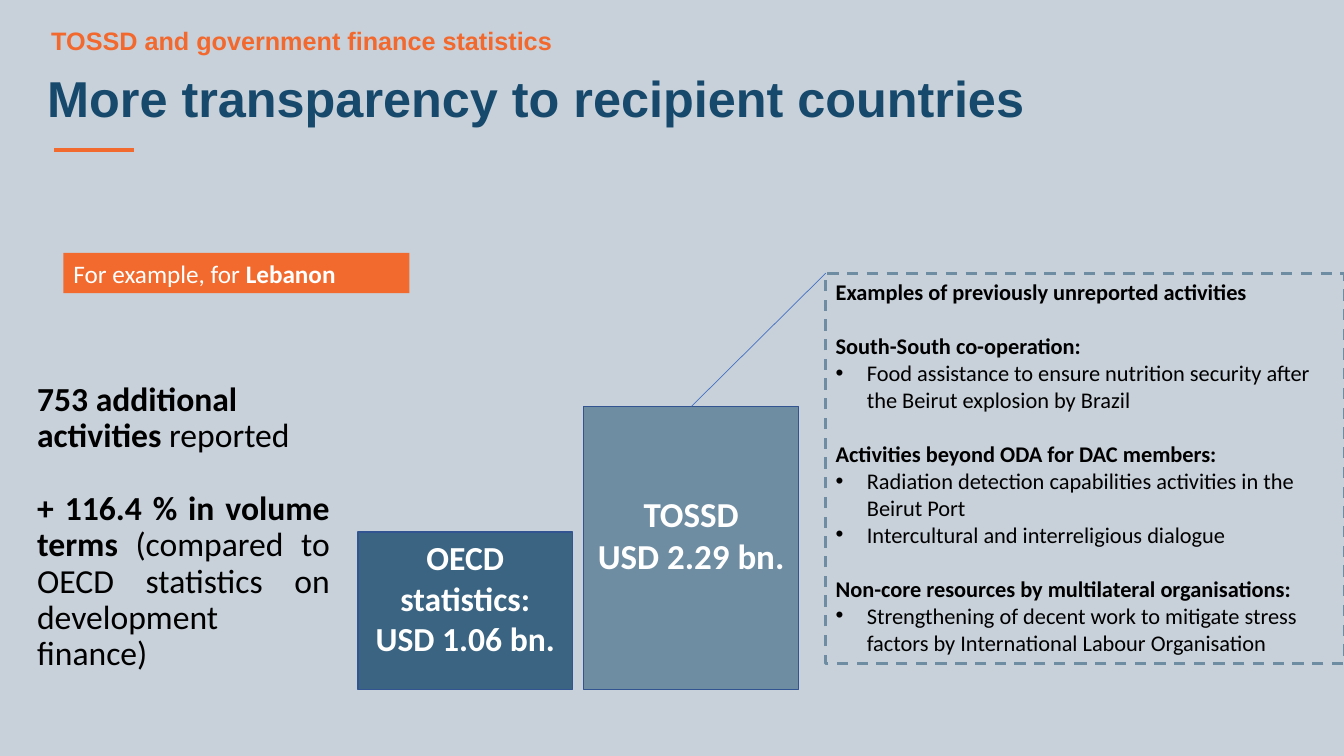
from dataclasses import dataclass

from lxml import etree
from pptx import Presentation
from pptx.dml.color import RGBColor
from pptx.enum.dml import MSO_LINE
from pptx.enum.shapes import MSO_CONNECTOR, MSO_SHAPE
from pptx.enum.text import MSO_ANCHOR, PP_ALIGN
from pptx.oxml.ns import qn
from pptx.util import Inches, Pt

RECT = MSO_SHAPE.RECTANGLE
STRAIGHT = MSO_CONNECTOR.STRAIGHT
DASH = MSO_LINE.DASH
LEFT, CENTER, JUSTIFY = PP_ALIGN.LEFT, PP_ALIGN.CENTER, PP_ALIGN.JUSTIFY
TOP, MIDDLE = MSO_ANCHOR.TOP, MSO_ANCHOR.MIDDLE


@dataclass(frozen=True)
class Theme:
    """Colours, fonts and type sizes of the slide."""
    background: str = "C8D0D9"
    orange: str = "F26A2D"
    kicker: str = "F2682D"
    navy: str = "16496B"
    blue: str = "3A6481"
    steel: str = "6F8DA2"
    outline: str = "325491"
    link: str = "4472C4"
    white: str = "FFFFFF"
    black: str = "000000"
    heading_font: str = "Arial"
    body_font: str = "Calibri"
    title_size: int = 36
    tossd_size: int = 25
    large_size: int = 24
    label_size: int = 18
    small_size: int = 16


THEME = Theme()

FINDINGS = [
    ([("753 additional", True)], 0),
    ([("activities ", True), ("reported", False)], 0),
    ([("+ 116.4 % in volume terms ", True),
      ("(compared to OECD statistics on development finance)", False)], 26.4),
]

EXAMPLES = [
    ("South-South co-operation:",
     ["Food assistance to ensure nutrition security after the Beirut explosion by Brazil"]),
    ("Activities beyond ODA for DAC members:",
     ["Radiation detection capabilities activities in the Beirut Port",
      "Intercultural and interreligious dialogue"]),
    ("Non-core resources by multilateral organisations:",
     ["Strengthening of decent work to mitigate stress factors by "
      "International Labour Organisation"]),
]


def rgb(value):
    """Turn a hex string into a colour."""
    return RGBColor.from_string(value)


def add_box(slide, box, fill=None, line=None, width=1, anchor=TOP):
    """Add a rectangle without shadow and return it."""
    sp = slide.shapes.add_shape(RECT, *map(Inches, box))
    sp.shadow.inherit = False
    if fill:
        sp.fill.solid()
        sp.fill.fore_color.rgb = rgb(fill)
    else:
        sp.fill.background()
    if line:
        sp.line.color.rgb = rgb(line)
        sp.line.width = Pt(width)
    else:
        sp.line.fill.background()
    sp.text_frame.word_wrap = True
    sp.text_frame.vertical_anchor = anchor
    return sp


def add_text(slide, box):
    """Add a wrapping text box and return its frame."""
    tf = slide.shapes.add_textbox(*map(Inches, box)).text_frame
    tf.word_wrap = True
    return tf


def add_line(slide, start, end, color, width):
    """Add a straight line without shadow."""
    cx = slide.shapes.add_connector(STRAIGHT, *map(Inches, start + end))
    cx.line.color.rgb = rgb(color)
    cx.line.width = Pt(width)
    etree.SubElement(cx._element.spPr, qn("a:effectLst"))


def add_bullet(p, indent):
    """Give a paragraph a hanging round bullet."""
    pPr = p._p.get_or_add_pPr()
    pPr.set("marL", str(Inches(indent)))
    pPr.set("indent", str(-Inches(indent)))
    etree.SubElement(pPr, qn("a:buFont")).set("typeface", THEME.heading_font)
    etree.SubElement(pPr, qn("a:buChar")).set("char", "•")


def write(tf, paragraphs, size, color, font=THEME.body_font, align=LEFT,
          spacing=None, indent=0.31):
    """Fill a frame from (runs, space before, bullet) paragraphs."""
    for i, (runs, before, *bullet) in enumerate(paragraphs):
        p = tf.add_paragraph() if i else tf.paragraphs[0]
        if any(bullet):
            add_bullet(p, indent)
        p.alignment = align
        if spacing:
            p.line_spacing = spacing
        if before:
            p.space_before = Pt(before)
        for text, bold in runs:
            r = p.add_run()
            r.text = text
            r.font.name = font
            r.font.size = Pt(size)
            r.font.bold = bold
            r.font.color.rgb = rgb(color)


def add_header(slide, x, y):
    """Place the kicker, title and accent rule."""
    write(add_text(slide, (x + 0.04, y, 6.79, 0.4)),
          [([("TOSSD and government finance statistics", True)], 0)],
          THEME.label_size, THEME.kicker, THEME.heading_font)
    write(add_text(slide, (x, y + 0.48, 10.72, 0.49)),
          [([("More transparency to recipient countries", True)], 0)],
          THEME.title_size, THEME.navy, THEME.heading_font, spacing=0.9)
    add_line(slide, (x + 0.17, y + 1.29), (x + 0.96, y + 1.29), THEME.orange, 3)


def add_country_label(slide, box):
    """Place the orange country label."""
    sp = add_box(slide, box, THEME.orange, anchor=MIDDLE)
    write(sp.text_frame, [([("For example, for ", False), ("Lebanon", True)], 0)],
          THEME.label_size, THEME.white)


def add_findings(slide, box):
    """Place the key findings."""
    write(add_text(slide, box), FINDINGS, THEME.large_size, THEME.black,
          align=JUSTIFY, spacing=0.9)


def add_bars(slide, x, bottom, width, gap):
    """Place the two volume bars on a shared baseline."""
    bars = [
        (1.56, THEME.blue, THEME.large_size, 0.05, ["OECD statistics:", "USD 1.06 bn."]),
        (2.81, THEME.steel, THEME.tossd_size, 0.86, ["TOSSD", "USD 2.29 bn."]),
    ]
    for i, (height, fill, size, inset, lines) in enumerate(bars):
        box = (x + i * (width + gap), bottom - height, width, height)
        tf = add_box(slide, box, fill, THEME.outline).text_frame
        tf.margin_top = Inches(inset)
        write(tf, [([(text, True)], 0) for text in lines], size, THEME.white, align=CENTER)


def add_examples(slide, box, bar_top):
    """Place the dashed examples panel and its link to the bar."""
    sp = add_box(slide, box, line=THEME.steel, width=2)
    sp.line.dash_style = DASH
    paragraphs = [([("Examples of previously unreported activities", True)], 0)]
    for heading, items in EXAMPLES:
        paragraphs.append(([(heading, True)], 19.5))
        paragraphs += [([(item, False)], 0, True) for item in items]
    write(sp.text_frame, paragraphs, THEME.small_size, THEME.black)
    add_line(slide, bar_top, box[:2], THEME.link, 0.5)


def main():
    """Build and save the slide."""
    prs = Presentation()
    prs.slide_width, prs.slide_height = Inches(13.33), Inches(7.5)
    slide = prs.slides.add_slide(prs.slide_layouts[6])
    slide.background.fill.solid()
    slide.background.fill.fore_color.rgb = rgb(THEME.background)
    add_header(slide, 0.37, 0.2)
    add_findings(slide, (0.27, 3.74, 3.1, 3.18))
    add_bars(slide, 3.55, 6.84, 2.13, 0.11)
    add_examples(slide, (8.19, 2.71, 5.14, 3.87), (6.86, 4.03))
    add_country_label(slide, (0.63, 2.51, 3.43, 0.4))
    prs.save("out.pptx")


if __name__ == "__main__":
    main()
